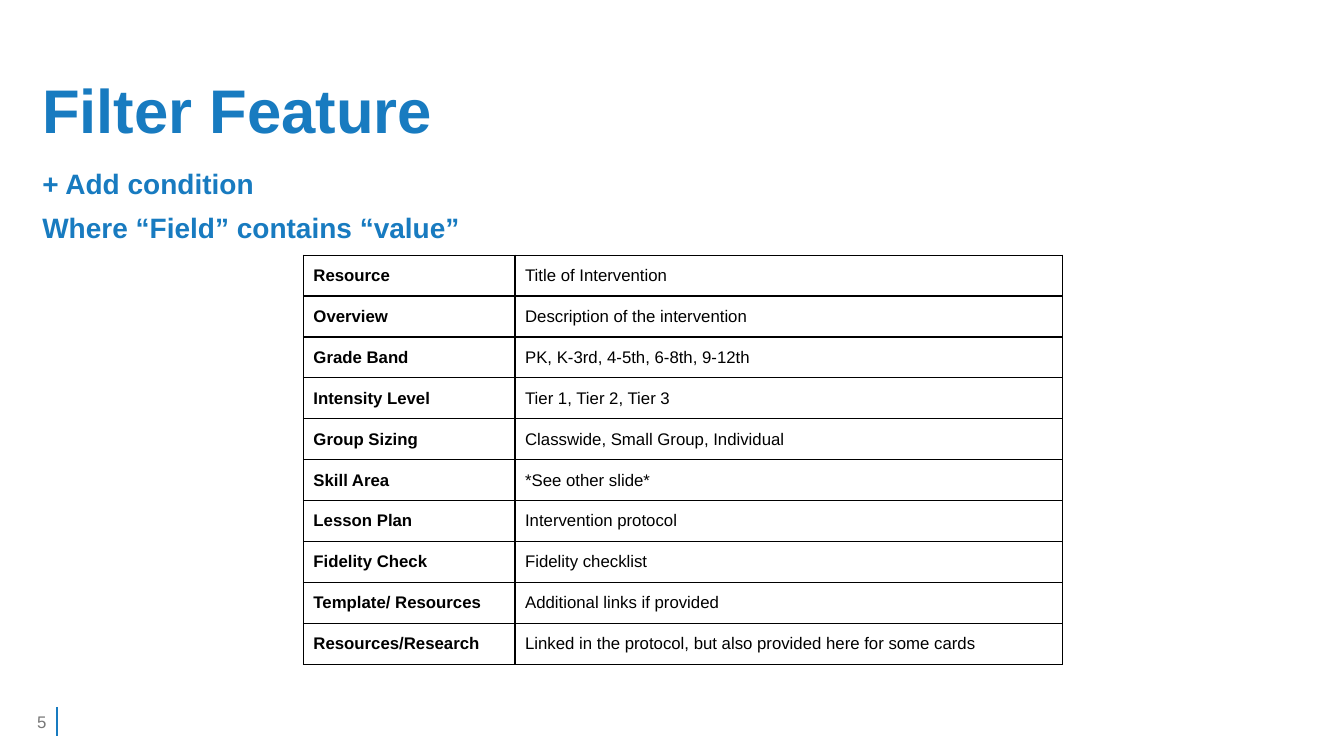
from dataclasses import dataclass

from lxml.etree import SubElement
from pptx import Presentation
from pptx.dml.color import RGBColor
from pptx.enum.shapes import MSO_CONNECTOR
from pptx.enum.text import MSO_ANCHOR, MSO_AUTO_SIZE, PP_ALIGN
from pptx.oxml.ns import qn
from pptx.slide import Slide
from pptx.table import _Cell
from pptx.text.text import TextFrame
from pptx.util import Pt

HUES = {"blue": "187BC0", "grey": "787878", "black": "000000"}
FACE = "Arial"


@dataclass
class Box:
    left: float
    top: float
    width: float
    height: float

    def spots(self) -> tuple[Pt, Pt, Pt, Pt]:
        return Pt(self.left), Pt(self.top), Pt(self.width), Pt(self.height)


@dataclass
class Row:
    field: str
    value: str


HEAD = Box(23, 28.8, 908, 104.4)
BODY = Box(23, 118, 908, 64)
PAGE = Box(0, 501, 40.3, 28.8)
GRID = Box(216.7, 182.2, 542.2, 292.3)
SPANS = (151.2, 391)
ROWS = [
    Row("Resource", "Title of Intervention"),
    Row("Overview", "Description of the intervention"),
    Row("Grade Band", "PK, K-3rd, 4-5th, 6-8th, 9-12th"),
    Row("Intensity Level", "Tier 1, Tier 2, Tier 3"),
    Row("Group Sizing", "Classwide, Small Group, Individual"),
    Row("Skill Area", "*See other slide*"),
    Row("Lesson Plan", "Intervention protocol"),
    Row("Fidelity Check", "Fidelity checklist"),
    Row("Template/ Resources", "Additional links if provided"),
    Row("Resources/Research", "Linked in the protocol, but also provided here for some cards"),
]


def style(frame: TextFrame, size: float, hue: str, bold: bool = False) -> None:
    for para in frame.paragraphs:
        for run in para.runs:
            font = run.font
            font.name = FACE
            font.size = Pt(size)
            font.bold = bold
            font.color.rgb = RGBColor.from_string(HUES[hue])


def fill_holder(slide: Slide, index: int, box: Box, text: str, size: float,
                anchor: MSO_ANCHOR) -> None:
    shape = slide.placeholders[index]
    shape.left, shape.top, shape.width, shape.height = box.spots()
    frame = shape.text_frame
    frame.text = text
    frame.word_wrap = True
    frame.auto_size = MSO_AUTO_SIZE.NONE
    frame.vertical_anchor = anchor
    for order, para in enumerate(frame.paragraphs):
        props = para._p.get_or_add_pPr()
        props.set("marL", "0")
        props.set("indent", "0")
        SubElement(props, qn("a:buNone"))
        para.alignment = PP_ALIGN.LEFT
        para.line_spacing = 0.9
        para.space_before = Pt(10 if order else 0)
    style(frame, size, "blue", True)


def add_page(slide: Slide, box: Box, text: str) -> None:
    frame = slide.shapes.add_textbox(*box.spots()).text_frame
    frame.word_wrap = True
    frame.vertical_anchor = MSO_ANCHOR.MIDDLE
    frame.text = text
    frame.paragraphs[0].alignment = PP_ALIGN.RIGHT
    style(frame, 12, "grey")


def add_rule(slide: Slide, left: float, top: float, end: float) -> None:
    rule = slide.shapes.add_connector(
        MSO_CONNECTOR.STRAIGHT, Pt(left), Pt(top), Pt(left), Pt(end))
    rule.line.color.rgb = RGBColor.from_string(HUES["blue"])
    rule.line.width = Pt(1.5)
    SubElement(rule._element.spPr, qn("a:effectLst"))


def edge_cell(cell: _Cell) -> None:
    props = cell._tc.get_or_add_tcPr()
    for side in ("lnL", "lnR", "lnT", "lnB"):
        line = SubElement(props, qn(f"a:{side}"), w=str(Pt(1)))
        paint = SubElement(line, qn("a:solidFill"))
        SubElement(paint, qn("a:srgbClr"), val=HUES["black"])
    cell.fill.background()


def add_grid(slide: Slide, box: Box, rows: list[Row]) -> None:
    table = slide.shapes.add_table(len(rows), len(SPANS), *box.spots()).table
    table.first_row = False
    table.horz_banding = False
    for column, span in zip(table.columns, SPANS):
        column.width = Pt(span)
    for line, row in zip(table.rows, rows):
        line.height = Pt(box.height / len(rows))
        for cell, text, bold in zip(line.cells, (row.field, row.value), (True, False)):
            cell.text_frame.text = text
            cell.vertical_anchor = MSO_ANCHOR.MIDDLE
            style(cell.text_frame, 12, "black", bold)
            edge_cell(cell)


def main() -> None:
    deck = Presentation()
    deck.slide_width, deck.slide_height = Pt(960), Pt(540)
    slide = deck.slides.add_slide(deck.slide_layouts[1])
    add_rule(slide, 40.6, 505, 525.6)
    fill_holder(slide, 0, HEAD, "Filter Feature", 44, MSO_ANCHOR.MIDDLE)
    fill_holder(slide, 1, BODY, "+ Add condition\nWhere “Field” contains “value”",
                20, MSO_ANCHOR.TOP)
    add_page(slide, PAGE, "5")
    add_grid(slide, GRID, ROWS)
    deck.save("out.pptx")


if __name__ == "__main__":
    main()
